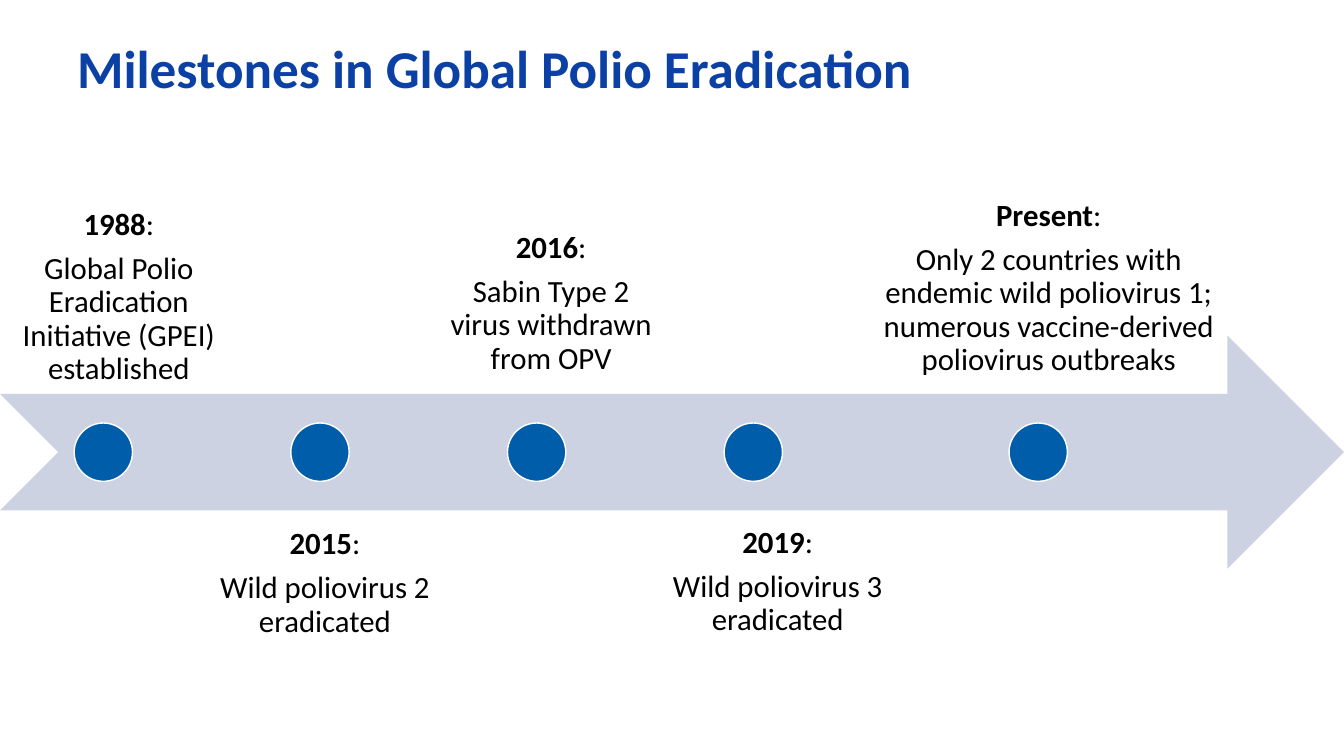
"""Build the polio eradication timeline slide."""
from pptx import Presentation
from pptx.dml.color import RGBColor
from pptx.enum.shapes import MSO_SHAPE
from pptx.enum.text import MSO_ANCHOR, MSO_AUTO_SIZE, PP_ALIGN
from pptx.util import Cm, Pt

TOP, BOTTOM = MSO_ANCHOR.TOP, MSO_ANCHOR.BOTTOM
LEFT, CENTER = PP_ALIGN.LEFT, PP_ALIGN.CENTER
NO_AUTOFIT = MSO_AUTO_SIZE.NONE
ARROW, DOT = MSO_SHAPE.NOTCHED_RIGHT_ARROW, MSO_SHAPE.OVAL

TITLE_BLUE = RGBColor(0x0B, 0x40, 0xA5)
ARROW_GREY = RGBColor(0xCC, 0xD2, 0xE2)
DOT_BLUE = RGBColor(0x00, 0x5D, 0xA9)
WHITE = RGBColor(0xFF, 0xFF, 0xFF)
BLACK = RGBColor(0x00, 0x00, 0x00)
FONT = "Calibri"

HEADING = "Milestones in Global Polio Eradication"
MILESTONES = [
    ("1988", "Global Polio Eradication Initiative (GPEI) established",
     BOTTOM, (0, 3.78, 5.99, 6.38)),
    ("2015", "Wild poliovirus 2 eradicated",
     TOP, (4.95, 12.88, 6.48, 5.87)),
    ("2016", "Sabin Type 2 virus withdrawn from OPV",
     BOTTOM, (10.92, 6.17, 5.94, 3.73)),
    ("2019", "Wild poliovirus 3 eradicated",
     TOP, (16.36, 12.85, 6.48, 5.87)),
    ("Present", "Only 2 countries with endemic wild poliovirus 1; "
     "numerous vaccine-derived poliovirus outbreaks",
     BOTTOM, (21.82, 4.06, 9.22, 5.87)),
]

SLIDE_WIDTH, SLIDE_HEIGHT = 33.87, 19.05
ARROW_TOP, ARROW_HEIGHT = 8.46, 5.87
DOT_SIZE, FIRST_DOT, DOT_STEP, PRESENT_DOT = 1.47, 1.87, 5.46, 25.43
TEXT_SIZE, TEXT_INSET = 22, 0.43


def style(font, size, color, bold=False):
    font.name, font.size, font.bold = FONT, Pt(size), bold
    font.color.rgb = color


def add_filled(slide, preset, box, color):
    shape = slide.shapes.add_shape(preset, *map(Cm, box))
    shape.shadow.inherit = False
    shape.fill.solid()
    shape.fill.fore_color.rgb = color
    return shape


def add_heading(slide):
    heading = slide.shapes.title
    heading.left, heading.top = Cm(1.69), Cm(0.76)
    heading.width, heading.height = Cm(30.48), Cm(3.3)
    frame = heading.text_frame
    frame.text = HEADING
    frame.auto_size = NO_AUTOFIT
    frame.vertical_anchor = TOP
    frame.paragraphs[0].alignment = LEFT
    style(frame.paragraphs[0].runs[0].font, 38, TITLE_BLUE, True)


def add_label(slide, date, event, anchor, box):
    frame = slide.shapes.add_textbox(*map(Cm, box)).text_frame
    frame.word_wrap = True
    frame.vertical_anchor = anchor
    frame.margin_left = frame.margin_right = Cm(TEXT_INSET)
    frame.margin_top = frame.margin_bottom = Cm(TEXT_INSET)
    frame.text = f"{date}\n{event}"
    date_line, event_line = frame.paragraphs
    date_line.add_run().text = ":"
    for line in (date_line, event_line):
        line.alignment = CENTER
        line.line_spacing = 0.9
        line.space_after = Pt(0.35 * TEXT_SIZE)
        for run in line.runs:
            style(run.font, TEXT_SIZE, BLACK, run.text == date)


def add_dot(slide, left):
    top = ARROW_TOP + (ARROW_HEIGHT - DOT_SIZE) / 2
    dot = add_filled(slide, DOT, (left, top, DOT_SIZE, DOT_SIZE), DOT_BLUE)
    dot.line.color.rgb = WHITE
    dot.line.width = Pt(1)


def main():
    deck = Presentation()
    deck.slide_width, deck.slide_height = Cm(SLIDE_WIDTH), Cm(SLIDE_HEIGHT)
    slide = deck.slides.add_slide(deck.slide_layouts[5])
    add_heading(slide)
    arrow_box = (0, ARROW_TOP, SLIDE_WIDTH, ARROW_HEIGHT)
    add_filled(slide, ARROW, arrow_box, ARROW_GREY).line.fill.background()
    dot_lefts = [FIRST_DOT + i * DOT_STEP for i in range(len(MILESTONES) - 1)]
    for milestone, dot_left in zip(MILESTONES, dot_lefts + [PRESENT_DOT]):
        add_label(slide, *milestone)
        add_dot(slide, dot_left)
    deck.save("out.pptx")


if __name__ == "__main__":
    main()
